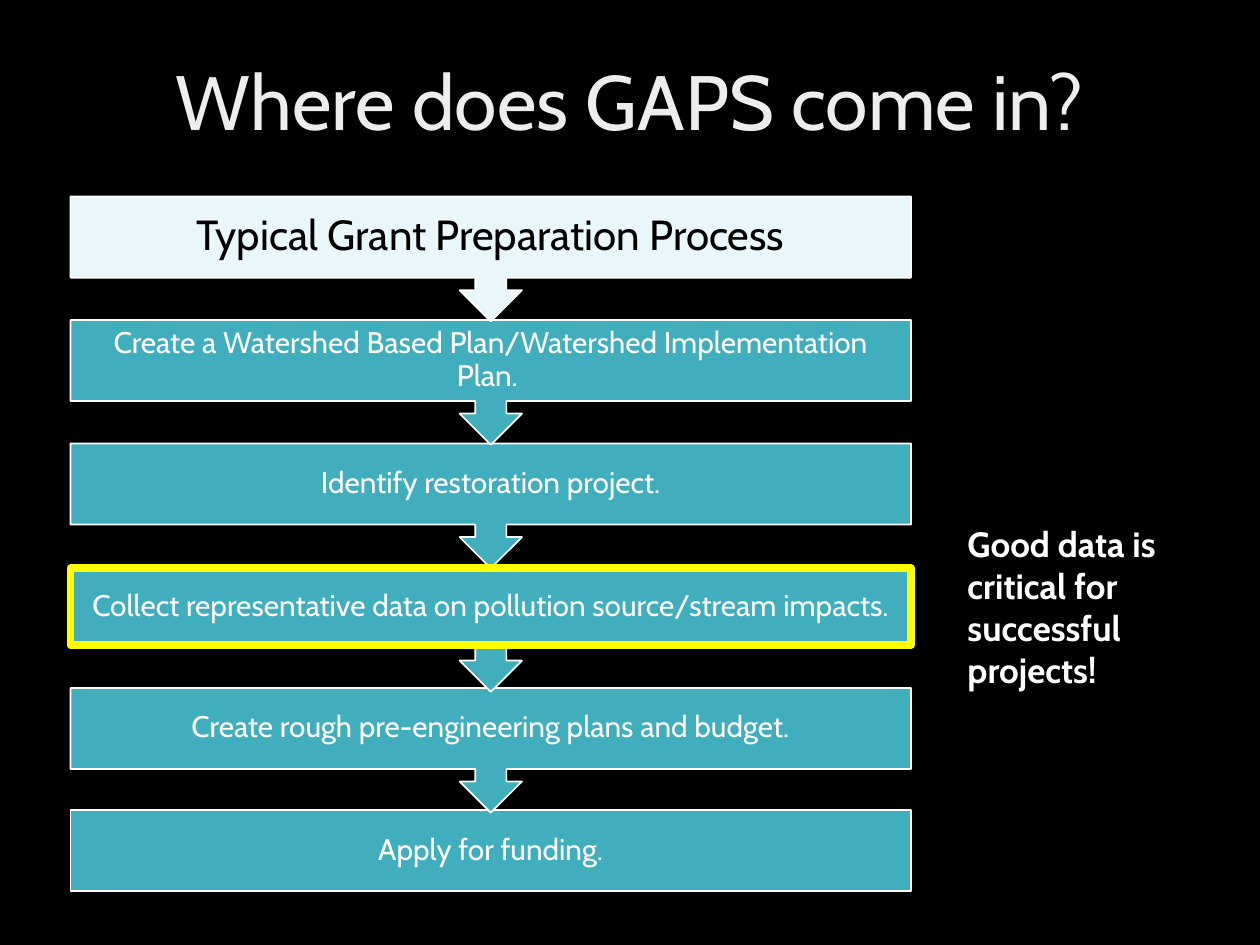
from pptx import Presentation
from pptx.dml.color import RGBColor
from pptx.enum.shapes import MSO_SHAPE as Shape
from pptx.enum.text import MSO_ANCHOR as Anchor, PP_ALIGN as Align
from pptx.util import Inches, Pt

BLACK = RGBColor(0x00, 0x00, 0x00)
WHITE = RGBColor(0xFF, 0xFF, 0xFF)
SILVER = RGBColor(0xED, 0xED, 0xED)
TEAL = RGBColor(0x41, 0xAE, 0xBD)
ICE = RGBColor(0xEA, 0xF7, 0xFA)
YELLOW = RGBColor(0xFF, 0xFF, 0x00)

STEP_HEIGHT = 0.64
CALLOUT_HEIGHT = 0.99
HEADING = {"fill": ICE, "color": BLACK, "size": 24, "inset": 0.19}
STEP = {"fill": TEAL, "color": WHITE, "size": 17, "inset": 0.13}
STEPS = [
    (1.56, "Typical Grant Preparation Process", HEADING),
    (2.54, "Create a Watershed Based Plan/Watershed Implementation Plan. ", STEP),
    (3.52, "Identify restoration project.", STEP),
    (4.5, "Collect representative data on pollution source/stream impacts.", STEP),
    (5.46, "Create rough pre-engineering plans and budget.", STEP),
    (6.43, "Apply for funding.", STEP),
]


def add_text(slide, box, text, font, frame=None, paragraph=None):
    text_frame = slide.shapes.add_textbox(*map(Inches, box)).text_frame
    text_frame.word_wrap = True
    line = text_frame.paragraphs[0]
    run = line.add_run()
    run.text = text
    run.font.name = "Cabin"
    run.font.color.rgb = font["color"]
    run.font.size = Pt(font["size"])
    run.font.bold = font.get("bold", False)
    for target, values in ((text_frame, frame), (line, paragraph)):
        for key, value in (values or {}).items():
            setattr(target, key, value)


def add_outline(slide, kind, box, fill, line, width):
    outline = slide.shapes.add_shape(kind, *map(Inches, box))
    outline.shadow.inherit = False
    if fill is None:
        outline.fill.background()
    else:
        outline.fill.solid()
        outline.fill.fore_color.rgb = fill
    outline.line.color.rgb = line
    outline.line.width = Pt(width)
    return outline


def add_title(slide, box):
    add_text(slide, box, "Where does GAPS come in?", {"color": SILVER, "size": 44},
             {"vertical_anchor": Anchor.MIDDLE},
             {"alignment": Align.CENTER, "line_spacing": 0.9})


def add_process(slide, left, width):
    for index, (top, text, style) in reversed(list(enumerate(STEPS))):
        is_last = index == len(STEPS) - 1
        kind = Shape.RECTANGLE if is_last else Shape.UP_ARROW_CALLOUT
        height = STEP_HEIGHT if is_last else CALLOUT_HEIGHT
        block = add_outline(slide, kind, (left, top, width, height), style["fill"], WHITE, 1)
        block.rotation = 0 if is_last else 180
        margins = {f"margin_{side}": Inches(style["inset"])
                   for side in ("left", "top", "right", "bottom")}
        add_text(slide, (left, top, width, STEP_HEIGHT), text, style,
                 {"vertical_anchor": Anchor.MIDDLE, **margins},
                 {"alignment": Align.CENTER, "line_spacing": 0.9})


def add_data_note(slide, box):
    add_text(slide, box, "Good data is critical for successful projects!",
             {"color": WHITE, "size": 20, "bold": True})


def main():
    presentation = Presentation()
    presentation.slide_width, presentation.slide_height = Inches(10), Inches(7.5)
    slide = presentation.slides.add_slide(presentation.slide_layouts[6])
    slide.background.fill.solid()
    slide.background.fill.fore_color.rgb = BLACK
    add_title(slide, (0.69, 0.4, 8.62, 0.88))
    add_data_note(slide, (7.58, 4.1, 2.28, 1.45))
    add_process(slide, 0.56, 6.67)
    add_outline(slide, Shape.RECTANGLE, (0.56, 4.51, 6.67, 0.61), None, YELLOW, 4.5)
    presentation.save("out.pptx")


if __name__ == "__main__":
    main()
